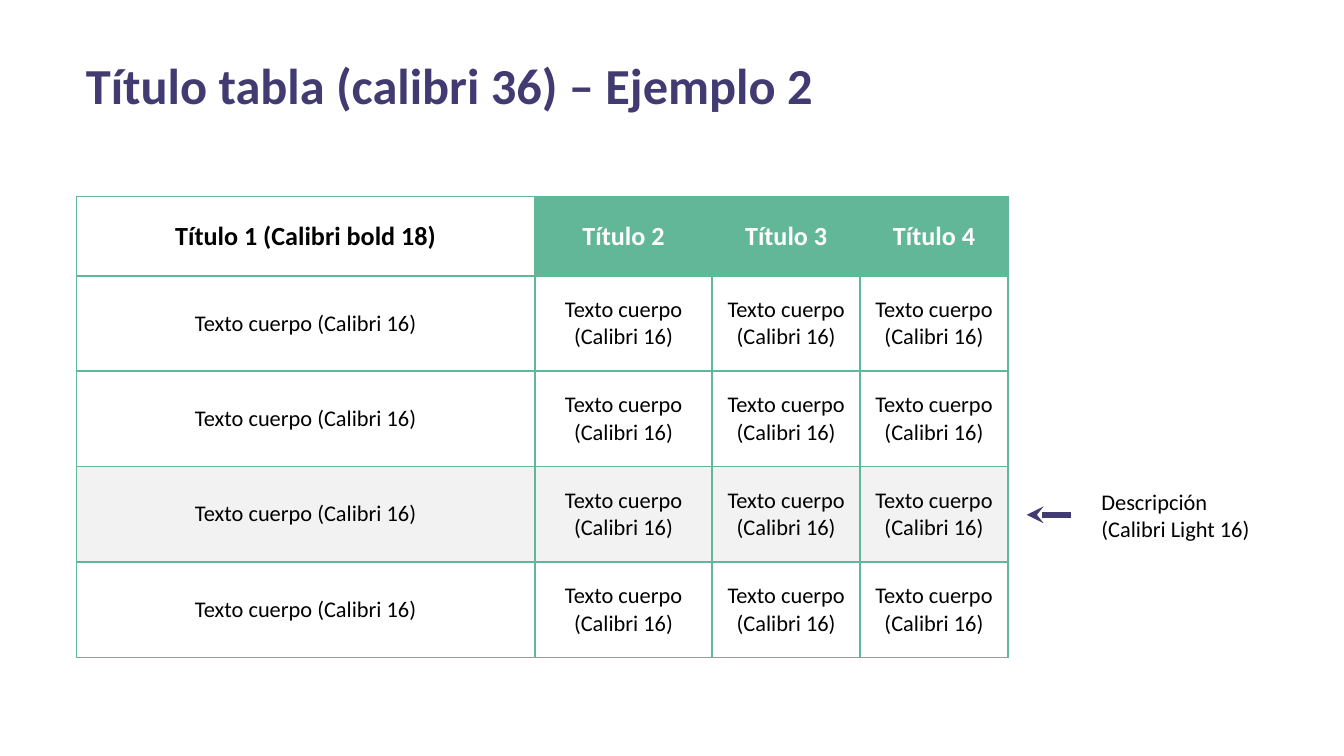
"""Builds a slide with a titled table and a note that points to one row."""
import pptx
import pptx.dml.color
import pptx.enum.shapes
import pptx.enum.text
import pptx.oxml
import pptx.oxml.ns
import pptx.util

WIDTH = 10
HEIGHT = WIDTH * 9 / 16
FONT = "Calibri"
PURPLE, GREEN, GRAY = "423B71", "63B799", "F2F2F2"
BLACK, WHITE = "000000", "FFFFFF"
COLUMNS = [3.41, 1.32, 1.1, 1.1]
ROWS = [0.59] + [0.71] * 4
HEADERS = ["Título 1 (Calibri bold 18)", "Título 2", "Título 3", "Título 4"]
BODY = "Texto cuerpo (Calibri 16)"
MARKED_ROW = 3


def color(value):
    """Return the colour for a hex string."""
    return pptx.dml.color.RGBColor.from_string(value)


def across(percent):
    """Return a percentage of the slide's width."""
    return pptx.util.Inches(WIDTH * percent / 100)


def down(percent):
    """Return a percentage of the slide's height."""
    return pptx.util.Inches(HEIGHT * percent / 100)


def write(tf, text, size=12, fill=BLACK, bold=False, align=None):
    """Write each line of text as a paragraph in one format."""
    for i, line in enumerate(text.split("\n")):
        p = tf.add_paragraph() if i else tf.paragraphs[0]
        p.alignment = align
        r = p.add_run()
        r.text = line
        r.font.name = FONT
        r.font.size = pptx.util.Pt(size)
        r.font.bold = bold
        r.font.color.rgb = color(fill)


def add_text(s, left, top, width, height, text, **style):
    """Add a wrapping text box placed by percentages of the slide."""
    sp = s.shapes.add_textbox(across(left), down(top), across(width), down(height))
    tf = sp.text_frame
    tf.word_wrap = True
    tf.auto_size = pptx.enum.text.MSO_AUTO_SIZE.SHAPE_TO_FIT_TEXT
    tf.margin_left = tf.margin_right = pptx.util.Inches(0.07)
    tf.margin_top = tf.margin_bottom = pptx.util.Inches(0.04)
    write(tf, text, **style)


def set_borders(cell, line, width=1):
    """Draw the four borders of a cell."""
    tc_pr = cell._tc.get_or_add_tcPr()
    for side in ("lnL", "lnR", "lnT", "lnB"):
        tc_pr.append(pptx.oxml.parse_xml(
            f'<a:{side} {pptx.oxml.ns.nsdecls("a")} w="{pptx.util.Pt(width)}">'
            f'<a:solidFill><a:srgbClr val="{line}"/></a:solidFill></a:{side}>'))


def format_cell(cell, text, background=None, **style):
    """Set the text, margins, borders and fill of a cell."""
    cell.vertical_anchor = pptx.enum.text.MSO_ANCHOR.MIDDLE
    cell.margin_left = cell.margin_right = pptx.util.Inches(0.08)
    cell.margin_top = cell.margin_bottom = pptx.util.Inches(0.04)
    write(cell.text_frame, text, align=pptx.enum.text.PP_ALIGN.CENTER, **style)
    set_borders(cell, GREEN)
    if background:
        cell.fill.solid()
        cell.fill.fore_color.rgb = color(background)
    else:
        cell.fill.background()


def add_grid(s, left, top):
    """Add the table with its header row and one marked row."""
    table = s.shapes.add_table(
        len(ROWS), len(COLUMNS), across(left), down(top),
        pptx.util.Inches(sum(COLUMNS)), pptx.util.Inches(sum(ROWS))).table
    table.first_row = table.horz_banding = False
    for column, width in zip(table.columns, COLUMNS):
        column.width = pptx.util.Inches(width)
    for row, height in zip(table.rows, ROWS):
        row.height = pptx.util.Inches(height)
    for j, header in enumerate(HEADERS):
        format_cell(table.cell(0, j), header, GREEN if j else None,
                    size=14, bold=True, fill=WHITE if j else BLACK)
        for i in range(1, len(ROWS)):
            format_cell(table.cell(i, j), BODY, GRAY if i == MARKED_ROW else None)


def add_arrow(s, start, end, height, line, width):
    """Add a level arrow between two percentages of the slide's width."""
    sp = s.shapes.add_connector(
        pptx.enum.shapes.MSO_CONNECTOR.STRAIGHT,
        across(start), down(height), across(end), down(height))
    sp.line.color.rgb = color(line)
    sp.line.width = pptx.util.Pt(width)
    ns = pptx.oxml.ns.nsdecls("a")
    sp.line._get_or_add_ln().append(
        pptx.oxml.parse_xml(f'<a:tailEnd {ns} type="stealth"/>'))
    sp._element.spPr.append(pptx.oxml.parse_xml(f"<a:effectLst {ns}/>"))


def main():
    """Build and save the slide."""
    prs = pptx.Presentation()
    prs.slide_width, prs.slide_height = across(100), down(100)
    s = prs.slides.add_slide(prs.slide_layouts[6])
    add_text(s, 5.7, 6.5, 58, 9.4, "Título tabla (calibri 36) – Ejemplo 2",
             size=27, fill=PURPLE, bold=True)
    add_grid(s, 5.7, 26)
    add_text(s, 81.25, 63.85, 17.6, 8.5, "Descripción\n(Calibri Light 16)")
    add_arrow(s, 79.7, 76.4, 68.1, PURPLE, 3)
    prs.save("out.pptx")


if __name__ == "__main__":
    main()
